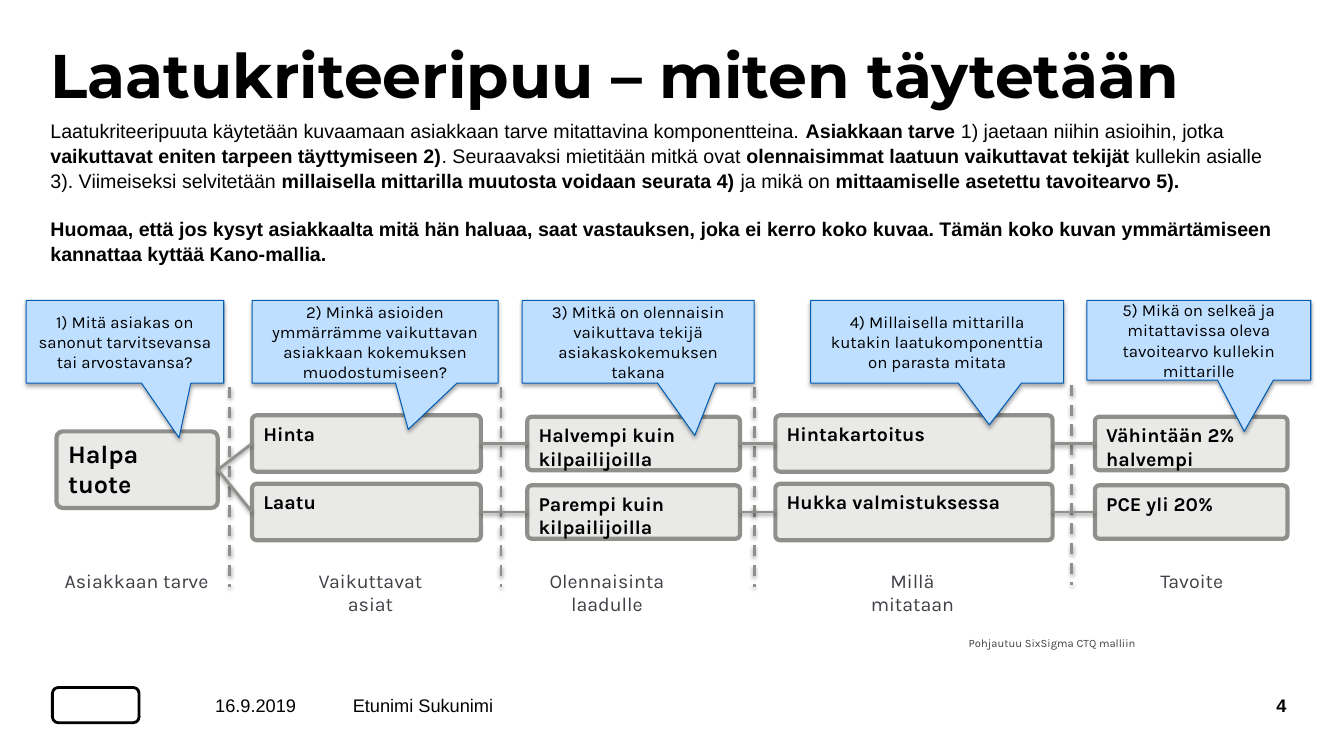
from dataclasses import dataclass

from lxml import etree
from pptx import Presentation
from pptx.dml.color import RGBColor
from pptx.enum.dml import MSO_LINE
from pptx.enum.shapes import MSO_CONNECTOR, MSO_SHAPE
from pptx.enum.text import MSO_ANCHOR, MSO_AUTO_SIZE, PP_ALIGN
from pptx.oxml.ns import qn
from pptx.util import Inches, Pt

LEFT, CENTER, RIGHT = PP_ALIGN.LEFT, PP_ALIGN.CENTER, PP_ALIGN.RIGHT
TOP, MIDDLE = MSO_ANCHOR.TOP, MSO_ANCHOR.MIDDLE
ROUND, CALLOUT = MSO_SHAPE.ROUNDED_RECTANGLE, MSO_SHAPE.RECTANGULAR_CALLOUT
SITE_LEFT, SITE_RIGHT = 1, 3


@dataclass(frozen=True)
class Theme:
    ink: str = "000000"
    soft: str = "404046"
    gray: str = "8F8F8C"
    box: str = "E9E9E8"
    note: str = "BEDFFF"
    edge: str = "005CB4"
    white: str = "FFFFFF"
    head: str = "Montserrat"
    body: str = "Arial"
    tree: str = "Karla"
    title: int = 44
    root: int = 18
    text: int = 14
    foot: int = 13
    hint: int = 12
    tiny: int = 8


T = Theme()

TITLE = "Laatukriteeripuu – miten täytetään"
INTRO = [  # paragraphs of (text, bold)
    [
        ("Laatukriteeripuuta käytetään kuvaamaan asiakkaan tarve mitattavina komponentteina. ", False),
        ("Asiakkaan tarve", True),
        (" 1) jaetaan niihin asioihin, jotka ", False),
        ("vaikuttavat eniten tarpeen täyttymiseen 2)", True),
        (". Seuraavaksi mietitään mitkä ovat ", False),
        ("olennaisimmat laatuun vaikuttavat tekijät", True),
        (" kullekin asialle 3). Viimeiseksi selvitetään ", False),
        ("millaisella mittarilla muutosta voidaan seurata 4) ", True),
        ("ja mikä on ", False),
        ("mittaamiselle asetettu tavoitearvo 5).", True),
    ],
    [
        ("Huomaa, että jos kysyt asiakkaalta mitä hän haluaa, saat vastauksen, joka ei kerro "
         "koko kuvaa. Tämän koko kuvan ymmärtämiseen kannattaa kyttää Kano-mallia.", True),
    ],
]
ROOT = ("Halpa tuote", (0.56, 4.28, 1.6, 0.76))
MIDS = (4.4, 5.08)  # centre line of each row
COLUMNS = [  # left, width, height, text per row
    (2.5, 2.27, 0.56, ("Hinta", "Laatu")),
    (5.23, 2.11, 0.53, ("Halvempi kuin kilpailijoilla", "Parempi kuin kilpailijoilla")),
    (7.69, 2.75, 0.56, ("Hintakartoitus", "Hukka valmistuksessa")),
    (10.86, 1.91, 0.53, ("Vähintään 2% halvempi", "PCE yli 20%")),
]
DIVIDERS = [(2.28, 3.84), (4.97, 3.84), (7.48, 3.84), (10.63, 3.82)]
DROP = 1.98
HINT_TOP = 2.98
HINTS = [  # left, width, height, pointer tip, text
    (0.26, 1.96, 0.82, (0.274, 1.163), "1) Mitä asiakas on sanonut tarvitsevansa tai arvostavansa?"),
    (2.5, 2.44, 0.82, (0.135, 1.061),
     "2) Minkä asioiden ymmärrämme vaikuttavan asiakkaan kokemuksen muodostumiseen?"),
    (5.18, 2.3, 0.82, (0.244, 1.134),
     "3) Mitkä on olennaisin vaikuttava tekijä asiakaskokemuksen takana"),
    (8.04, 2.51, 0.82, (0.206, 1.006),
     "4) Millaisella mittarilla kutakin laatukomponenttia on parasta mitata"),
    (10.78, 2.22, 0.79, (0.203, 1.145),
     "5) Mikä on selkeä ja mitattavissa oleva tavoitearvo kullekin mittarille"),
]
LABEL_TOP, LABEL_HEIGHT = 5.59, 0.32
LABELS = [  # left, width, text
    (0.5, 1.71, "Asiakkaan tarve"),
    (2.9, 1.55, "Vaikuttavat asiat"),
    (5.08, 1.88, "Olennaisinta laadulle"),
    (8.36, 1.38, "Millä mitataan"),
    (11.27, 1.1, "Tavoite"),
]
SOURCE = ("Pohjautuu SixSigma CTQ malliin", (9.51, 6.26, 2.34, 0.23))
FOOTER_TOP, FOOTER_HEIGHT = 6.86, 0.28
FOOTER = [  # left, width, align, bold, text
    (1.82, 1.43, CENTER, False, "16.9.2019"),
    (3.5, 4.5, LEFT, False, "Etunimi Sukunimi"),
    (11.41, 1.35, RIGHT, True, "4"),
]
BADGE = (0.52, 6.82, 0.86, 0.35)

deck = Presentation()
deck.slide_width, deck.slide_height = Inches(13.33), Inches(7.5)
slide = deck.slides.add_slide(deck.slide_layouts[5])
shapes = slide.shapes


def color(code):
    return RGBColor.from_string(code)


def inches(spot):
    return [Inches(side) for side in spot]


def style(run, size, font, bold=False, ink=T.ink):
    run.font.size, run.font.name, run.font.bold = Pt(size), font, bold
    run.font.color.rgb = color(ink)


def write(frame, text, size, font, bold=False, ink=T.ink, align=LEFT, anchor=TOP):
    frame.text = text
    frame.word_wrap = True
    frame.vertical_anchor = anchor
    para = frame.paragraphs[0]
    para.alignment = align
    style(para.runs[0], size, font, bold, ink)


def trim(frame):
    """Remove the inner margins."""
    frame.margin_left = frame.margin_right = frame.margin_top = frame.margin_bottom = 0


def add_text(spot):
    return shapes.add_textbox(*inches(spot)).text_frame


def add_box(kind, spot, fill, edge, width):
    box = shapes.add_shape(kind, *inches(spot))
    box.shadow.inherit = False
    box.fill.solid()
    box.fill.fore_color.rgb = color(fill)
    box.line.color.rgb = color(edge)
    box.line.width = Pt(width)
    return box


def cast(item, alpha, dist):
    """Give a shape or connector a soft shadow straight below it."""
    props = item._element.spPr
    effects = props.find(qn("a:effectLst"))
    if effects is None:
        effects = etree.SubElement(props, qn("a:effectLst"))
    shade = etree.SubElement(effects, qn("a:outerShdw"), blurRad=str(Pt(3.1)),
                             dist=str(Pt(dist)), dir="5400000", rotWithShape="0")
    tint = etree.SubElement(shade, qn("a:srgbClr"), val=T.ink)
    etree.SubElement(tint, qn("a:alpha"), val=str(alpha * 1000))


def add_line(ends=(0, 0, 0, 0), dash=None):
    line = shapes.add_connector(MSO_CONNECTOR.STRAIGHT, *inches(ends))
    line.line.color.rgb = color(T.gray)
    line.line.width = Pt(2)
    line.line.dash_style = dash
    cast(line, 38, 1.6)
    return line


def join(start, end):
    line = add_line()
    line.begin_connect(start, SITE_RIGHT)
    line.end_connect(end, SITE_LEFT)


def add_node(text, spot, size):
    node = add_box(ROUND, spot, T.box, T.gray, 3)
    node.adjustments[0] = 0.083
    write(node.text_frame, text, size, T.tree, bold=True)
    return node


title = shapes.title
title.left, title.top, title.width, title.height = inches((0.5, 0.45, 12.29, 0.72))
write(title.text_frame, TITLE, T.title, T.head, bold=True)
title.text_frame.auto_size = MSO_AUTO_SIZE.NONE
title.text_frame.paragraphs[0].line_spacing = 0.9
trim(title.text_frame)

intro = add_text((0.5, 1.17, 12.29, 1.45))
intro.word_wrap = True
trim(intro)
for order, parts in enumerate(INTRO):
    para = intro.add_paragraph() if order else intro.paragraphs[0]
    para.line_spacing = 1.05
    para.space_before = Pt(17 * order)
    for words, bold in parts:
        run = para.add_run()
        run.text = words
        style(run, T.text, T.body, bold)

for x, top in DIVIDERS:
    add_line((x, top, x, top + DROP), MSO_LINE.DASH)

root = add_node(*ROOT, T.root)
tails = [root] * len(MIDS)
for left, width, height, names in COLUMNS:
    nodes = [add_node(name, (left, mid - height / 2, width, height), T.text)
             for name, mid in zip(names, MIDS)]
    for tail, node in zip(tails, nodes):
        join(tail, node)
    tails = nodes

for left, width, height, tip, text in HINTS:
    hint = add_box(CALLOUT, (left, HINT_TOP, width, height), T.note, T.edge, 0.75)
    hint.adjustments[0], hint.adjustments[1] = tip
    cast(hint, 35, 1.8)
    write(hint.text_frame, text, T.hint, T.tree, align=CENTER, anchor=MIDDLE)

for left, width, text in LABELS:
    write(add_text((left, LABEL_TOP, width, LABEL_HEIGHT)), text, T.text, T.tree,
          ink=T.soft, align=CENTER)
write(add_text(SOURCE[1]), SOURCE[0], T.tiny, T.tree, ink=T.soft)

add_box(ROUND, BADGE, T.white, T.ink, 2)
for left, width, align, bold, text in FOOTER:
    frame = add_text((left, FOOTER_TOP, width, FOOTER_HEIGHT))
    trim(frame)
    write(frame, text, T.foot, T.body, bold, align=align, anchor=MIDDLE)

deck.save("out.pptx")
